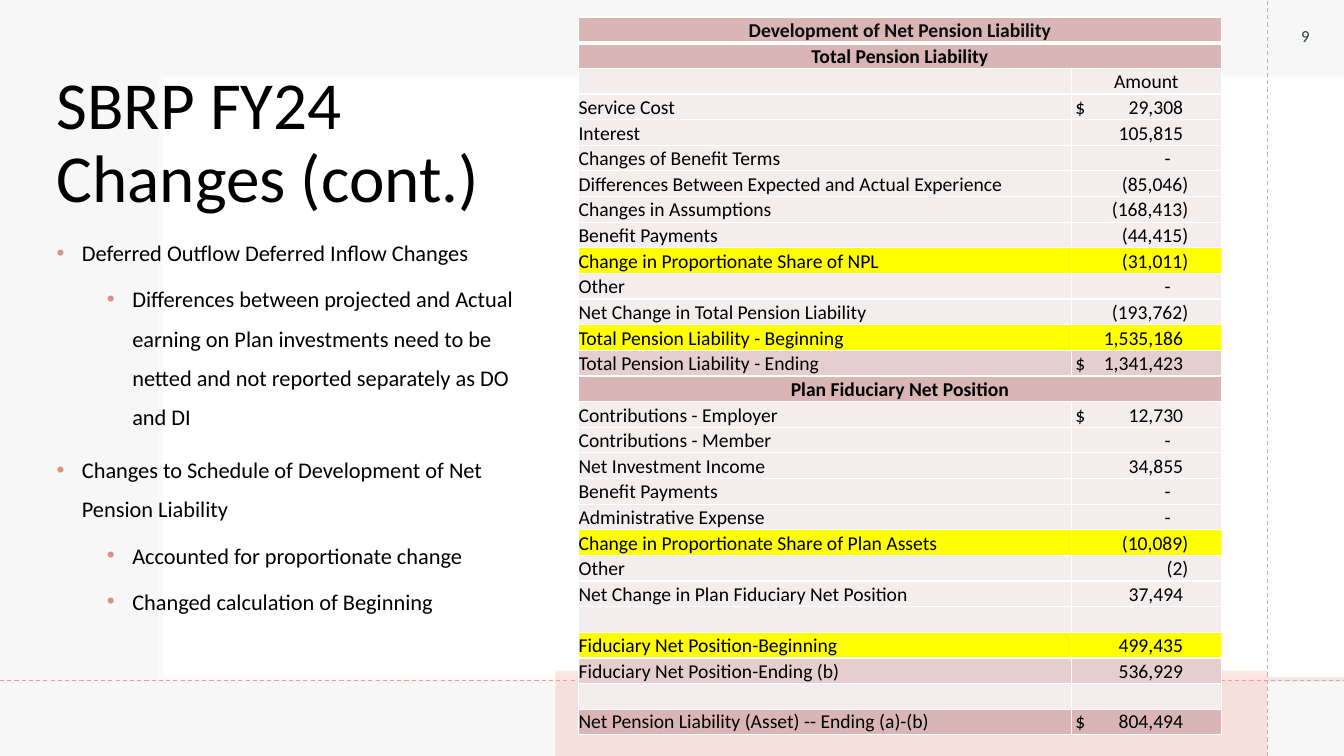
from lxml.etree import SubElement
from pptx import Presentation
from pptx.dml.color import RGBColor
from pptx.enum.dml import MSO_LINE
from pptx.enum.shapes import MSO_CONNECTOR, MSO_SHAPE
from pptx.enum.text import MSO_ANCHOR, MSO_AUTO_SIZE, PP_ALIGN
from pptx.oxml.ns import qn
from pptx.util import Cm, Pt

FONT = "Calibri"
COLORS = {
    "black": "000000", "heading": "0D0D0D", "white": "FFFFFF", "navy": "2C3948",
    "grey": "F4F4F4", "rose": "BF8484", "coral": "F49D90", "bullet": "D6947C",
    "header": "D9B5B5", "plain": "F4EDED", "total": "E5CECE", "changed": "FFFF00",
}
BULLETS = [
    (0, "Deferred Outflow Deferred Inflow Changes"),
    (1, "Differences between projected and Actual earning on Plan investments "
        "need to be netted and not reported separately as DO and DI"),
    (0, "Changes to Schedule of Development of Net Pension Liability"),
    (1, "Accounted for proportionate change"),
    (1, "Changed calculation of Beginning"),
]
LIABILITY_ROWS = [
    ("header", "Development of Net Pension Liability", ""),
    ("header", "Total Pension Liability", ""),
    ("plain", "", "Amount"),
    ("plain", "Service Cost", "$\t29,308"),
    ("plain", "Interest", "\t105,815"),
    ("plain", "Changes of Benefit Terms", "\t-"),
    ("plain", "Differences Between Expected and Actual Experience", "\t(85,046)"),
    ("plain", "Changes in Assumptions", "\t(168,413)"),
    ("plain", "Benefit Payments", "\t(44,415)"),
    ("changed", "Change in Proportionate Share of NPL", "\t(31,011)"),
    ("plain", "Other", "\t-"),
    ("plain", "Net Change in Total Pension Liability", "\t(193,762)"),
    ("changed", "Total Pension Liability - Beginning", "\t1,535,186"),
    ("total", "Total Pension Liability - Ending", "$\t1,341,423"),
    ("header", "Plan Fiduciary Net Position", ""),
    ("plain", "Contributions - Employer", "$\t12,730"),
    ("plain", "Contributions - Member", "\t-"),
    ("plain", "Net Investment Income", "\t34,855"),
    ("plain", "Benefit Payments", "\t-"),
    ("plain", "Administrative Expense", "\t-"),
    ("changed", "Change in Proportionate Share of Plan Assets", "\t(10,089)"),
    ("plain", "Other", "\t(2)"),
    ("plain", "Net Change in Plan Fiduciary Net Position", "\t37,494"),
    ("plain", "", ""),
    ("changed", "Fiduciary Net Position-Beginning", "\t499,435"),
    ("total", "Fiduciary Net Position-Ending (b)", "\t536,929"),
    ("plain", "", ""),
    ("header", "Net Pension Liability (Asset) -- Ending (a)-(b)", "$\t804,494"),
]


def color(name):
    return RGBColor.from_string(COLORS[name])


def place(shape, left, top, width, height):
    shape.left, shape.top = Cm(left), Cm(top)
    shape.width, shape.height = Cm(width), Cm(height)


def add_run(paragraph, text, size, name="black", bold=False):
    run = paragraph.add_run()
    run.text = text
    run.font.name, run.font.size, run.font.bold = FONT, Pt(size), bold
    run.font.color.rgb = color(name)


def add_panel(slide, left, top, width, height, fill, opacity=100):
    panel = slide.shapes.add_shape(
        MSO_SHAPE.RECTANGLE, Cm(left), Cm(top), Cm(width), Cm(height))
    panel.shadow.inherit = False
    panel.fill.solid()
    panel.fill.fore_color.rgb = color(fill)
    panel.line.fill.background()
    if opacity < 100:
        srgb = panel._element.spPr.find(".//" + qn("a:srgbClr"))
        SubElement(srgb, qn("a:alpha"), val=str(opacity * 1000))


def add_guide(slide, start_x, start_y, end_x, end_y):
    guide = slide.shapes.add_connector(
        MSO_CONNECTOR.STRAIGHT, Cm(start_x), Cm(start_y), Cm(end_x), Cm(end_y))
    guide.line.color.rgb = color("coral")
    guide.line.width = Pt(0.75)
    guide.line.dash_style = MSO_LINE.DASH
    SubElement(guide._element.spPr, qn("a:effectLst"))


def fill_title(slide):
    title = slide.shapes.title
    slide.shapes._spTree.append(title._element)
    place(title, 1.17, 1.5, 11.2, 4.09)
    frame = title.text_frame
    frame.auto_size = MSO_AUTO_SIZE.NONE
    frame.vertical_anchor = MSO_ANCHOR.BOTTOM
    paragraph = frame.paragraphs[0]
    paragraph.alignment = PP_ALIGN.LEFT
    paragraph.line_spacing = 0.9
    add_run(paragraph, "SBRP FY24 Changes (cont.)", 48)


def add_slide_number(slide):
    box = slide.shapes.add_textbox(Cm(31.95), Cm(-0.05), Cm(1.9), Cm(1.9))
    box.text_frame.word_wrap = True
    box.text_frame.vertical_anchor = MSO_ANCHOR.MIDDLE
    paragraph = box.text_frame.paragraphs[0]
    paragraph.alignment = PP_ALIGN.CENTER
    paragraph.space_after = Pt(6)
    add_run(paragraph, "9", 12, "navy")


def fill_body(slide):
    body = slide.placeholders[1]
    slide.shapes._spTree.append(body._element)
    place(body, 1.17, 5.59, 12.34, 11.02)
    frame = body.text_frame
    frame.auto_size = MSO_AUTO_SIZE.NONE
    for index, (level, text) in enumerate(BULLETS):
        paragraph = frame.add_paragraph() if index else frame.paragraphs[0]
        paragraph.level = level
        paragraph.line_spacing = Pt(28)
        paragraph.space_before = Pt(5 if level else 10)
        properties = paragraph._p.get_or_add_pPr()
        properties.set("marL", str(Cm(0.64 + 1.27 * level)))
        properties.set("indent", str(Cm(-0.64)))
        bullet_color = SubElement(properties, qn("a:buClr"))
        SubElement(bullet_color, qn("a:srgbClr"), val=COLORS["bullet"])
        SubElement(properties, qn("a:buFont"), typeface="Arial")
        SubElement(properties, qn("a:buChar"), char="•")
        add_run(paragraph, text, 16)


def format_cell(cell, fill, bottom=1):
    properties = cell._tc.get_or_add_tcPr()
    for side, width in (("L", 1), ("R", 1), ("T", 1), ("B", bottom)):
        border = SubElement(properties, qn(f"a:ln{side}"), w=str(Pt(width)))
        solid = SubElement(border, qn("a:solidFill"))
        SubElement(solid, qn("a:srgbClr"), val=COLORS["white"])
    cell.margin_left = cell.margin_right = cell.margin_top = cell.margin_bottom = 0
    cell.vertical_anchor = MSO_ANCHOR.BOTTOM
    cell.fill.solid()
    cell.fill.fore_color.rgb = color(fill)


def amount_edge(amount):
    if amount.endswith("-"):
        return 2.4
    return 2.85 if amount.endswith(")") else 2.72


def fill_cell(cell, text, name="black", bold=False, centered=False):
    paragraph = cell.text_frame.paragraphs[0]
    if not text:
        SubElement(paragraph._p, qn("a:endParaRPr"), sz="1400")
        return
    if centered:
        paragraph.alignment = PP_ALIGN.CENTER
    if "\t" in text:
        cell.margin_left = Cm(0.1)
        tabs = SubElement(paragraph._p.get_or_add_pPr(), qn("a:tabLst"))
        SubElement(tabs, qn("a:tab"), pos=str(Cm(amount_edge(text))), algn="r")
    add_run(paragraph, text, 14, name, bold)


def add_liability_table(slide):
    count = len(LIABILITY_ROWS)
    table = slide.shapes.add_table(
        count, 2, Cm(14.58), Cm(0.43), Cm(16.2), Cm(18.11)).table
    table.first_row = table.horz_banding = False
    table.columns[0].width, table.columns[1].width = Cm(12.42), Cm(3.78)
    for index, (fill, label, amount) in enumerate(LIABILITY_ROWS):
        table.rows[index].height = Cm(18.11 / count)
        label_cell, amount_cell = table.cell(index, 0), table.cell(index, 1)
        for cell in (label_cell, amount_cell):
            format_cell(cell, fill, bottom=1 if index else 3)
        heading = fill == "header" and not amount
        if heading:
            label_cell.merge(amount_cell)
        fill_cell(label_cell, label, "black" if index else "heading", heading, heading)
        fill_cell(amount_cell, amount, centered=amount == "Amount")
    for cell in (label_cell, amount_cell):
        cell.vertical_anchor = MSO_ANCHOR.MIDDLE


def main():
    presentation = Presentation()
    presentation.slide_width, presentation.slide_height = Cm(33.87), Cm(19.05)
    slide = presentation.slides.add_slide(presentation.slide_layouts[1])
    add_panel(slide, 0, 0, 33.87, 19.05, "grey", 45)
    add_panel(slide, 4.01, 1.9, 29.86, 15.24, "white")
    add_panel(slide, 31.93, 11.89, 1.94, 5.28, "rose", 25)
    add_panel(slide, 4.11, 1.98, 29.76, 15.09, "white")
    add_panel(slide, 0, 0, 33.87, 19.05, "grey", 35)
    add_panel(slide, 4.11, 1.95, 29.76, 15.09, "white")
    fill_title(slide)
    add_slide_number(slide)
    fill_body(slide)
    add_panel(slide, 14, 16.9, 17.93, 2.15, "coral", 25)
    add_guide(slide, 31.93, 19.05, 31.93, 0)
    add_guide(slide, 0, 17.14, 33.87, 17.14)
    add_liability_table(slide)
    presentation.save("out.pptx")


if __name__ == "__main__":
    main()
